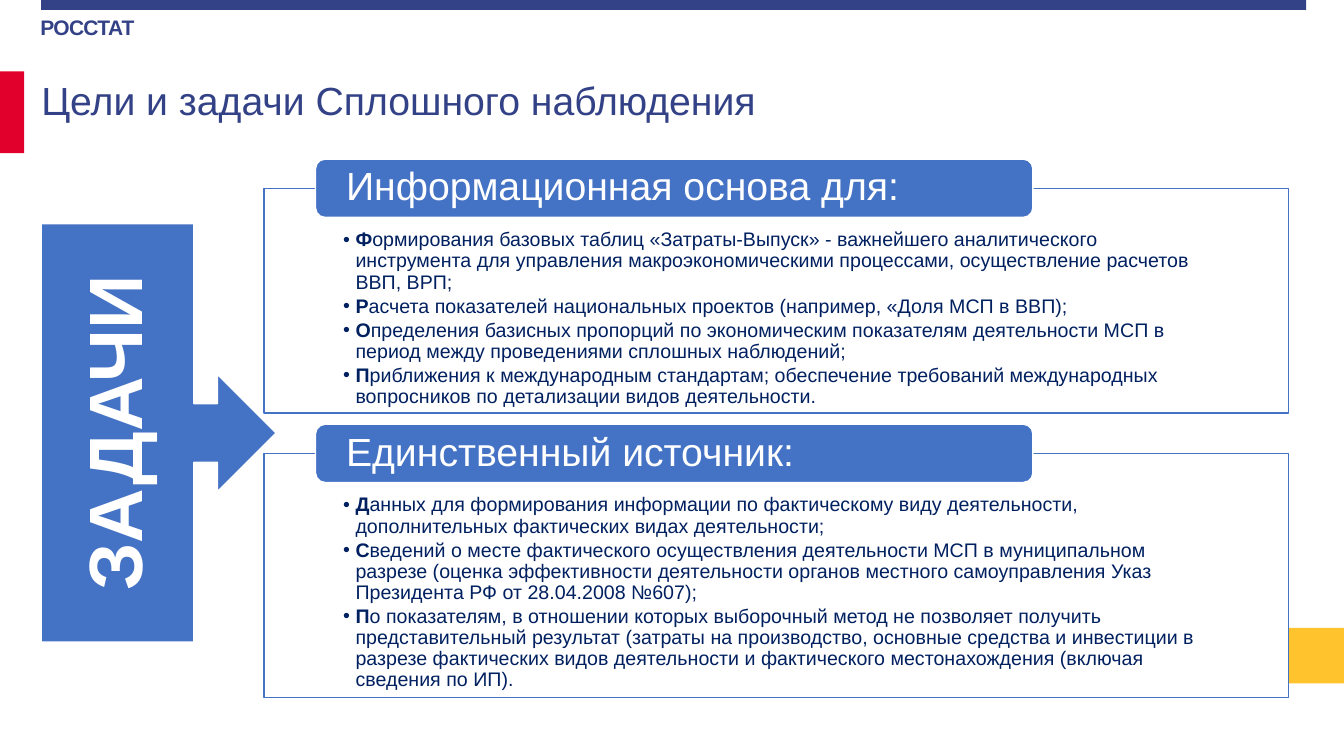
from lxml.etree import SubElement
from pptx import Presentation
from pptx.dml.color import RGBColor
from pptx.enum.shapes import MSO_SHAPE
from pptx.enum.text import MSO_ANCHOR, MSO_AUTO_SIZE, PP_ALIGN
from pptx.oxml.ns import qn
from pptx.util import Cm, Pt

COLORS = {"navy": "334286", "red": "E1002B", "yellow": "FFC32E",
          "blue": "4472C4", "white": "FFFFFF", "ink": "002060"}

GOALS = [
    ("Информационная основа для:", 4.75, 5.66, [
        "Формирования базовых таблиц «Затраты-Выпуск» - важнейшего аналитического инструмента для управления макроэкономическими процессами, осуществление расчетов ВВП, ВРП;",
        "Расчета показателей национальных проектов (например, «Доля МСП в ВВП);",
        "Определения базисных пропорций по экономическим показателям деятельности МСП в период между проведениями сплошных наблюдений;",
        "Приближения к международным стандартам; обеспечение требований международных вопросников по детализации видов деятельности.",
    ]),
    ("Единственный источник:", 11.43, 6.15, [
        "Данных для формирования информации по фактическому виду деятельности, дополнительных фактических видах деятельности;",
        "Сведений о месте фактического осуществления деятельности МСП в муниципальном разрезе (оценка эффективности деятельности органов местного самоуправления Указ Президента РФ от 28.04.2008 №607);",
        "По показателям, в отношении которых выборочный метод не позволяет получить представительный результат (затраты на производство, основные средства и инвестиции в разрезе фактических видов деятельности и фактического местонахождения (включая сведения по ИП).",
    ]),
]


def color(name):
    """Return the named colour."""
    return RGBColor.from_string(COLORS[name])


def set_font(paragraph, size, name, bold=False):
    """Format a whole paragraph in Arial."""
    font = paragraph.font
    font.name, font.size, font.bold = "Arial", Pt(size), bold
    font.color.rgb = color(name)


def set_frame(frame, insets, anchor=MSO_ANCHOR.TOP, wrap=True):
    """Set the insets (left, top, right, bottom), anchor and wrapping of a text frame."""
    frame.margin_left, frame.margin_top, frame.margin_right, frame.margin_bottom = map(Cm, insets)
    frame.vertical_anchor, frame.word_wrap = anchor, wrap
    frame.auto_size = MSO_AUTO_SIZE.NONE


def place(shape, left, top, width, height):
    """Move and size a shape in centimetres."""
    shape.left, shape.top, shape.width, shape.height = map(Cm, (left, top, width, height))


def add_block(page, kind, box, fill, line=None):
    """Add a filled shape with an optional outline."""
    shape = page.shapes.add_shape(kind, *map(Cm, box))
    shape.shadow.inherit = False
    shape.fill.solid()
    shape.fill.fore_color.rgb = color(fill)
    if line:
        shape.line.color.rgb = color(line)
        shape.line.width = Pt(1)
    else:
        shape.line.fill.background()
    return shape


def add_heading(page, left, top, width):
    """Place the top bar, agency label, red marker and slide title."""
    add_block(page, MSO_SHAPE.RECTANGLE, (left, top, width, 0.25), "navy")
    add_block(page, MSO_SHAPE.RECTANGLE, (0, top + 1.8, 0.61, 2.06), "red")

    label = page.shapes.add_textbox(Cm(left - 0.05), Cm(top + 0.33), Cm(2.92), Cm(0.81))
    set_frame(label.text_frame, (0.03, 0.03, 0, 0), wrap=False)
    para = label.text_frame.paragraphs[0]
    span = para.add_run()
    span.text = "РОССТАТ"
    span.font._element.set("spc", "-50")
    set_font(para, 15, "navy", bold=True)

    title = page.shapes.title
    place(title, left - 0.25, top + 1.78, 28.12, 1.96)
    set_frame(title.text_frame, (0.25, 0.13, 0.25, 0.13))
    para = title.text_frame.paragraphs[0]
    para.text = "Цели и задачи Сплошного наблюдения"
    para.alignment = PP_ALIGN.LEFT
    set_font(para, 28, "navy")


def add_bullet(para, text):
    """Write a bulleted item whose first letter is bold."""
    properties = para._p.get_or_add_pPr()
    properties.set("marL", str(Cm(0.31)))
    properties.set("indent", str(Cm(-0.31)))
    SubElement(properties, qn("a:buFont")).set("typeface", "Arial")
    SubElement(properties, qn("a:buChar")).set("char", "•")
    para.line_spacing, para.space_before, para.space_after = 0.9, Pt(0), Pt(2)
    set_font(para, 14, "ink")
    initial, rest = para.add_run(), para.add_run()
    initial.text, rest.text = text[0], text[1:]
    initial.font.bold = True


def add_goal(page, body, box, heading, items):
    """Place one outlined list with its rounded heading."""
    left, top, width, height = box
    place(body, *box)
    body.fill.solid()
    body.fill.fore_color.rgb = color("white")
    body.line.color.rgb = color("blue")
    body.line.width = Pt(1)
    frame = body.text_frame
    set_frame(frame, (2, 1.04, 2, 0.28))
    for index, item in enumerate(items):
        add_bullet(frame.add_paragraph() if index else frame.paragraphs[0], item)

    bar = add_block(page, MSO_SHAPE.ROUNDED_RECTANGLE,
                    (left + 1.3, top - 0.74, width * 0.7, 1.47), "blue", "white")
    set_frame(bar.text_frame, (0.7, 0, 0.7, 0), MSO_ANCHOR.MIDDLE)
    para = bar.text_frame.paragraphs[0]
    para.text = heading
    para.alignment, para.line_spacing = PP_ALIGN.LEFT, 0.9
    set_font(para, 28, "white")


def add_tasks_arrow(page, box):
    """Place the arrow callout with its vertical caption."""
    callout = add_block(page, MSO_SHAPE.RIGHT_ARROW_CALLOUT, box, "blue", "white")
    frame = callout.text_frame
    set_frame(frame, (0.1, 0.1, 0.1, 0.1), MSO_ANCHOR.MIDDLE)
    frame._txBody.bodyPr.set("vert", "vert270")
    para = frame.paragraphs[0]
    para.text = "ЗАДАЧИ"
    para.alignment, para.line_spacing = PP_ALIGN.CENTER, 0.9
    set_font(para, 54, "white", bold=True)


def main():
    """Build the slide and save it."""
    deck = Presentation()
    deck.slide_width, deck.slide_height = Cm(33.87), Cm(19.05)
    page = deck.slides.add_slide(deck.slide_layouts[3])
    add_heading(page, 1.04, 0, 31.88)
    add_block(page, MSO_SHAPE.RECTANGLE, (32.49, 15.82, 1.38, 1.4), "yellow")
    bodies = list(page.placeholders)[1:]
    for body, (heading, top, height, items) in zip(bodies, GOALS):
        add_goal(page, body, (6.65, top, 25.83, height), heading, items)
    add_tasks_arrow(page, (1.04, 5.64, 5.92, 10.54))
    deck.save("out.pptx")


if __name__ == "__main__":
    main()
